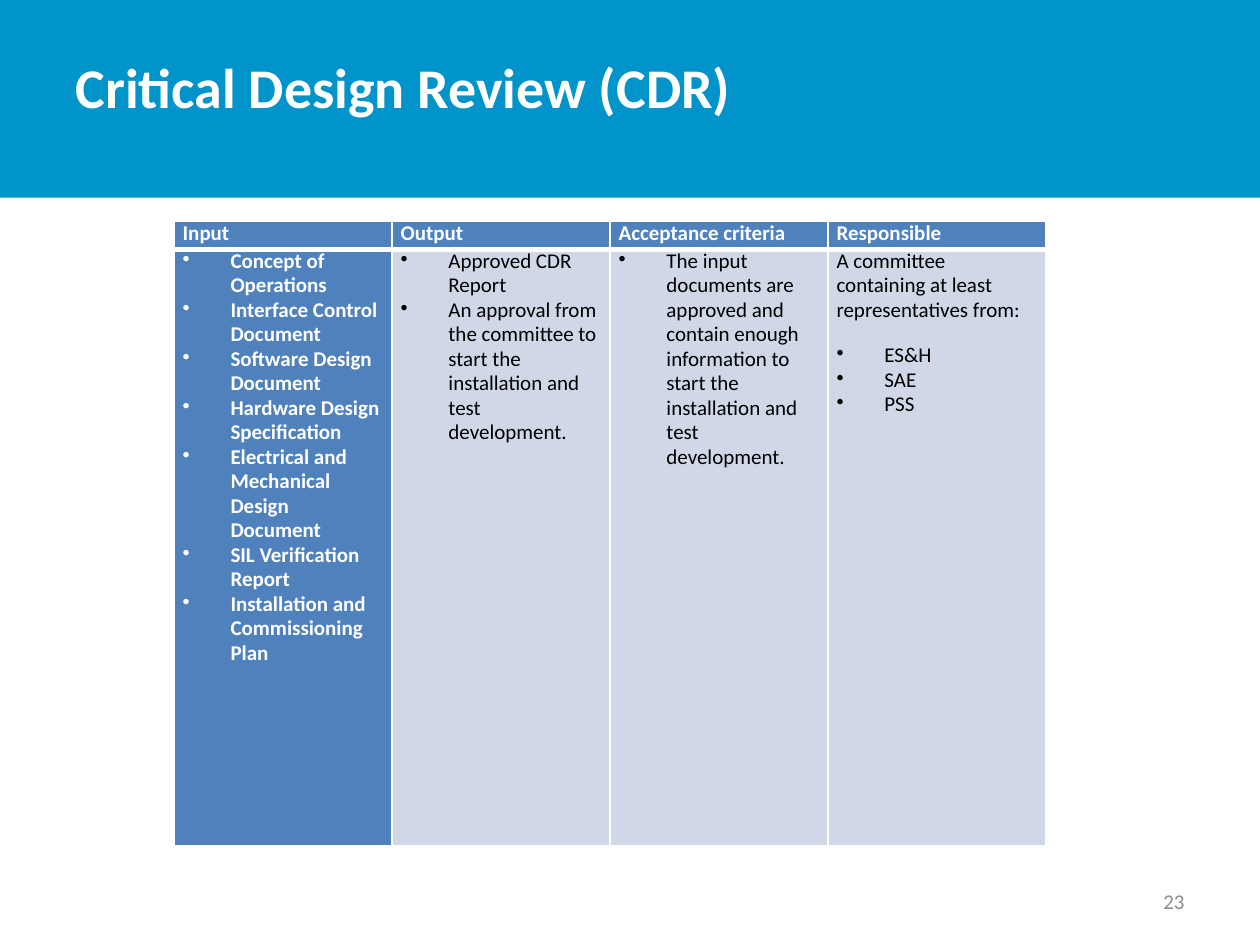
from lxml import etree
from pptx import Presentation
from pptx.dml.color import RGBColor
from pptx.enum.shapes import MSO_SHAPE
from pptx.enum.text import MSO_ANCHOR, PP_ALIGN
from pptx.oxml.ns import qn
from pptx.util import Inches, Pt

RECTANGLE = MSO_SHAPE.RECTANGLE
MIDDLE = MSO_ANCHOR.MIDDLE
LEFT, RIGHT = PP_ALIGN.LEFT, PP_ALIGN.RIGHT

TITLE = "Critical Design Review (CDR)"
PAGE_NUMBER = "23"
REVIEW = [
    ("Input", "", [
        "Concept of Operations",
        "Interface Control Document",
        "Software Design Document",
        "Hardware Design Specification",
        "Electrical and Mechanical Design Document",
        "SIL Verification Report",
        "Installation and Commissioning Plan",
    ]),
    ("Output", "", [
        "Approved CDR Report",
        "An approval from the committee to start the installation and test development.",
    ]),
    ("Acceptance criteria", "", [
        "The input documents are approved and contain enough information "
        "to start the installation and test development.",
    ]),
    ("Responsible", "A committee containing at least representatives from:",
     ["ES&H", "SAE", "PSS"]),
]
FONT = "Calibri"
WHITE, BLACK, GREY = "FFFFFF", "000000", "8C8C8C"
BAND_BLUE, HEAD_BLUE, PALE_BLUE = "0094CA", "4F81BD", "D0D8E8"
COLUMN_WIDTH = 1.73
ROW_HEIGHTS = [0.22, 4.73]
BULLET_INDENT = Inches(0.38)


def paint(fill, color):
    fill.solid()
    fill.fore_color.rgb = RGBColor.from_string(color)


def style(paragraph, size, color, bold=False):
    for run in paragraph.runs:
        run.font.name = FONT
        run.font.size = Pt(size)
        run.font.bold = bold
        run.font.color.rgb = RGBColor.from_string(color)


def add_bullet(paragraph):
    properties = paragraph._p.get_or_add_pPr()
    properties.set("marL", str(BULLET_INDENT))
    properties.set("indent", str(-BULLET_INDENT))
    etree.SubElement(properties, qn("a:buChar"), char="•")


def add_borders(cell, bottom_width):
    properties = cell._tc.get_or_add_tcPr()
    widths = [("L", 1), ("R", 1), ("T", 1), ("B", bottom_width)]
    for position, (side, width) in enumerate(widths):
        line = etree.Element(qn(f"a:ln{side}"), w=str(Pt(width)))
        fill = etree.SubElement(line, qn("a:solidFill"))
        etree.SubElement(fill, qn("a:srgbClr"), val=WHITE)
        properties.insert(position, line)


def fill_cell(cell, intro, bullets, background, color, bold, bottom_width):
    cell.margin_left = cell.margin_right = Inches(0.07)
    cell.margin_top = cell.margin_bottom = 0
    paint(cell.fill, background)
    add_borders(cell, bottom_width)
    lines = ([intro] if intro else []) + bullets
    cell.text_frame.text = "\n".join(lines)
    for paragraph, line in zip(cell.text_frame.paragraphs, lines):
        if line in bullets:
            add_bullet(paragraph)
        elif bullets:
            paragraph.space_after = Pt(12)
        paragraph.line_spacing = Pt(14)
        style(paragraph, 12, color, bold)


presentation = Presentation()
presentation.slide_width, presentation.slide_height = Inches(10), Inches(7.5)
slide = presentation.slides.add_slide(presentation.slide_layouts[5])

title = slide.shapes.title
title.left, title.top = Inches(0.5), Inches(0.3)
title.width, title.height = Inches(7.81), Inches(1.25)
title.text_frame.text = TITLE
title.text_frame.vertical_anchor = MIDDLE
title.text_frame.margin_bottom = Inches(0.54)
title.text_frame.paragraphs[0].alignment = LEFT
style(title.text_frame.paragraphs[0], 32, WHITE, True)

band = slide.shapes.add_shape(RECTANGLE, 0, 0, Inches(10), Inches(1.57))
band.shadow.inherit = False
paint(band.fill, BAND_BLUE)
band.line.fill.background()
title.element.addprevious(band.element)

page = slide.shapes.add_textbox(Inches(7.17), Inches(6.95), Inches(2.33), Inches(0.4))
page.text_frame.word_wrap = True
page.text_frame.vertical_anchor = MIDDLE
page.text_frame.text = PAGE_NUMBER
page.text_frame.paragraphs[0].alignment = RIGHT
style(page.text_frame.paragraphs[0], 12, GREY)

table = slide.shapes.add_table(
    len(ROW_HEIGHTS), len(REVIEW), Inches(1.38), Inches(1.76),
    Inches(COLUMN_WIDTH * len(REVIEW)), Inches(sum(ROW_HEIGHTS))).table
for row, height in zip(table.rows, ROW_HEIGHTS):
    row.height = Inches(height)
for index, (heading, intro, bullets) in enumerate(REVIEW):
    table.columns[index].width = Inches(COLUMN_WIDTH)
    fill_cell(table.cell(0, index), heading, [], HEAD_BLUE, WHITE, True, 3)
    first = index == 0
    fill_cell(table.cell(1, index), intro, bullets,
              HEAD_BLUE if first else PALE_BLUE,
              WHITE if first else BLACK, first, 1)

presentation.save("out.pptx")
